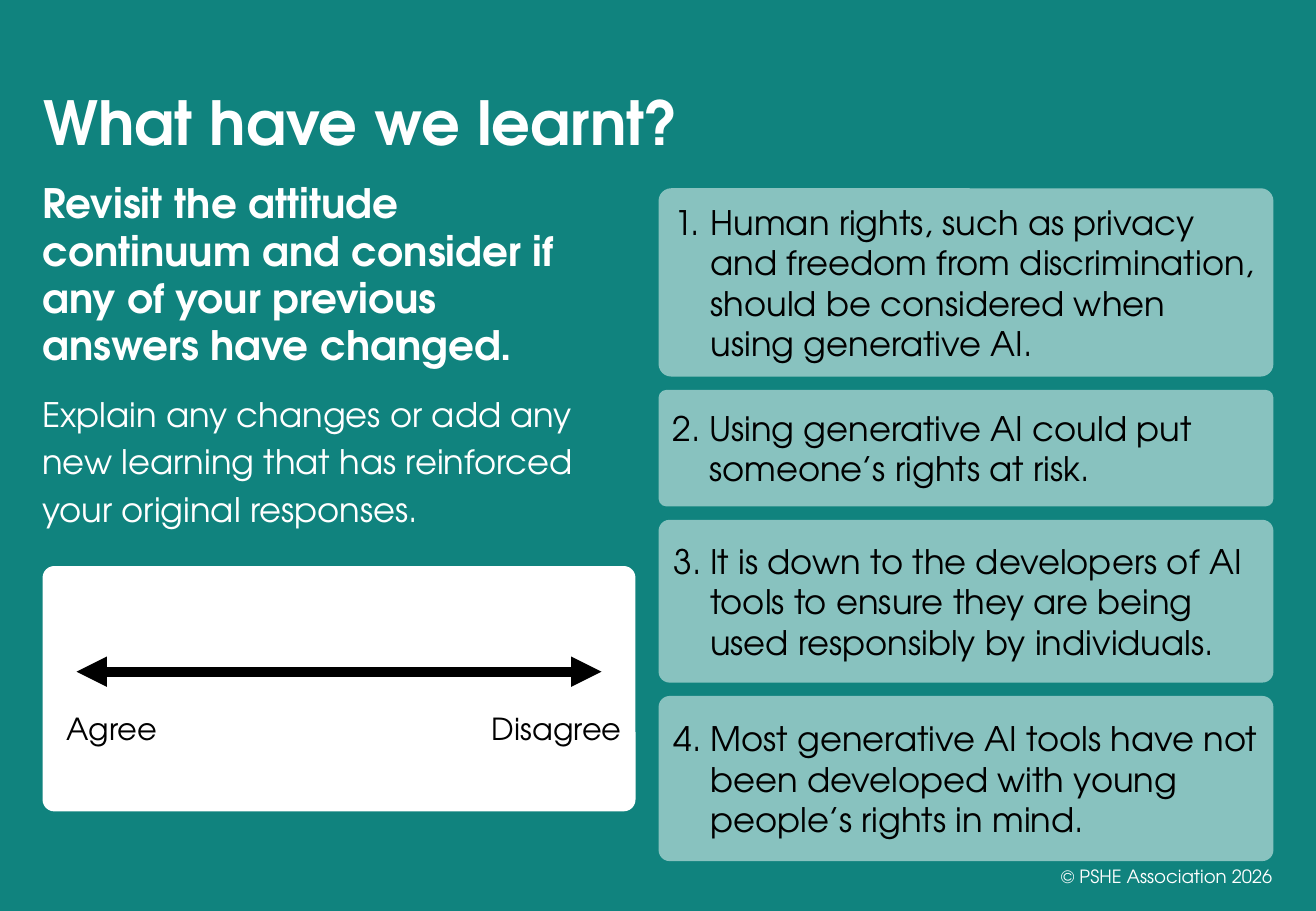
from typing import NamedTuple

from lxml.etree import SubElement
from pptx import Presentation
from pptx.dml.color import RGBColor
from pptx.enum.shapes import MSO_CONNECTOR, MSO_SHAPE
from pptx.enum.text import MSO_ANCHOR as Anchor, PP_ALIGN as Align
from pptx.oxml.ns import qn
from pptx.shapes.autoshape import Shape
from pptx.slide import Slide
from pptx.util import Pt

EMU_PER_PX = 9144
FONT = "TeX Gyre Adventor"
TEAL = RGBColor(0x10, 0x83, 0x7E)
PALE_TEAL = RGBColor(0x88, 0xC2, 0xBF)
WHITE = RGBColor(0xFF, 0xFF, 0xFF)
BLACK = RGBColor(0x00, 0x00, 0x00)

CARD_LEFT, CARD_TOP, CARD_WIDTH, CARD_GAP = 542, 155, 506, 11
NUMBER_INDENT = 30


class Box(NamedTuple):
    left: int
    top: int
    width: int
    height: int


class Passage(NamedTuple):
    text: str
    size: float
    color: RGBColor
    bold: bool = False
    leading: int | None = None
    before: int = 0
    align: Align = Align.LEFT
    number: int | None = None


class TextBlock(NamedTuple):
    box: Box
    passages: list[Passage]
    anchor: Anchor = Anchor.TOP


class Statement(NamedTuple):
    text: str
    height: int


TEXT_BLOCKS = [
    TextBlock(Box(26, 59, 643, 76),
              [Passage("What have we learnt?", 36, WHITE, True, 43)], Anchor.BOTTOM),
    TextBlock(Box(25, 143, 462, 478), [
        Passage("Revisit the attitude continuum and consider if any of your "
                "previous answers have changed.", 24, WHITE, True, 28),
        Passage("Explain any changes or add any new learning that has reinforced "
                "your original responses.", 20, WHITE, False, 28, 11),
    ]),
    TextBlock(Box(813, 701, 244, 40),
              [Passage("© PSHE Association 2026", 10.8, WHITE, align=Align.RIGHT)],
              Anchor.MIDDLE),
    TextBlock(Box(45, 580, 96, 40), [Passage("Agree", 18, BLACK)]),
    TextBlock(Box(395, 580, 129, 40), [Passage("Disagree", 18, BLACK)]),
]

STATEMENTS = [
    Statement("Human rights, such as privacy and freedom from discrimination, "
              "should be considered when using generative AI.", 155),
    Statement("Using generative AI could put someone’s rights at risk.", 96),
    Statement("It is down to the developers of AI tools to ensure they are being "
              "used responsibly by individuals.", 134),
    Statement("Most generative AI tools have not been developed with young "
              "people’s rights in mind.", 136),
]


def px(length: int) -> int:
    return length * EMU_PER_PX


def write(shape: Shape, passages: list[Passage], anchor: Anchor) -> None:
    frame = shape.text_frame
    frame.word_wrap = True
    frame.vertical_anchor = anchor
    for index, passage in enumerate(passages):
        paragraph = frame.add_paragraph() if index else frame.paragraphs[0]
        paragraph.text = passage.text
        paragraph.alignment = passage.align
        if passage.number:
            properties = paragraph._p.get_or_add_pPr()
            properties.set("marL", str(px(NUMBER_INDENT)))
            properties.set("indent", str(-px(NUMBER_INDENT)))
            SubElement(properties, qn("a:buAutoNum"), type="arabicPeriod",
                       startAt=str(passage.number))
        if passage.leading:
            paragraph.line_spacing = Pt(passage.leading)
        if passage.before:
            paragraph.space_before = Pt(passage.before)
        font = paragraph.font
        font.name, font.size, font.bold = FONT, Pt(passage.size), passage.bold
        font.color.rgb = passage.color


def add_text(slide: Slide, block: TextBlock) -> None:
    write(slide.shapes.add_textbox(*map(px, block.box)), block.passages, block.anchor)


def add_panel(slide: Slide, box: Box, fill: RGBColor, rounding: float) -> Shape:
    panel = slide.shapes.add_shape(MSO_SHAPE.ROUNDED_RECTANGLE, *map(px, box))
    panel.adjustments[0] = rounding
    panel.shadow.inherit = False
    panel.fill.solid()
    panel.fill.fore_color.rgb = fill
    panel.line.fill.background()
    return panel


def add_double_arrow(slide: Slide, left: int, right: int, y: int) -> None:
    arrow = slide.shapes.add_connector(
        MSO_CONNECTOR.STRAIGHT, px(left), px(y), px(right), px(y))
    arrow.line.color.rgb = BLACK
    arrow.line.width = Pt(6)
    outline = arrow.line._get_or_add_ln()
    for end in ("a:headEnd", "a:tailEnd"):
        SubElement(outline, qn(end), type="triangle")
    SubElement(arrow._element.spPr, qn("a:effectLst"))


def add_statements(slide: Slide) -> None:
    top = CARD_TOP
    for number, statement in enumerate(STATEMENTS, start=1):
        card = add_panel(slide, Box(CARD_LEFT, top, CARD_WIDTH, statement.height),
                         PALE_TEAL, 0.067)
        write(card, [Passage(statement.text, 20, BLACK, leading=24, number=number)],
              Anchor.MIDDLE)
        top += statement.height + CARD_GAP


def main() -> None:
    deck = Presentation()
    deck.slide_width, deck.slide_height = px(1083), px(750)
    slide = deck.slides.add_slide(deck.slide_layouts[6])
    slide.background.fill.solid()
    slide.background.fill.fore_color.rgb = TEAL

    add_panel(slide, Box(35, 466, 488, 202), WHITE, 0.048)
    for block in TEXT_BLOCKS:
        add_text(slide, block)
    add_double_arrow(slide, 63, 495, 553)
    add_statements(slide)
    deck.save("out.pptx")


if __name__ == "__main__":
    main()
